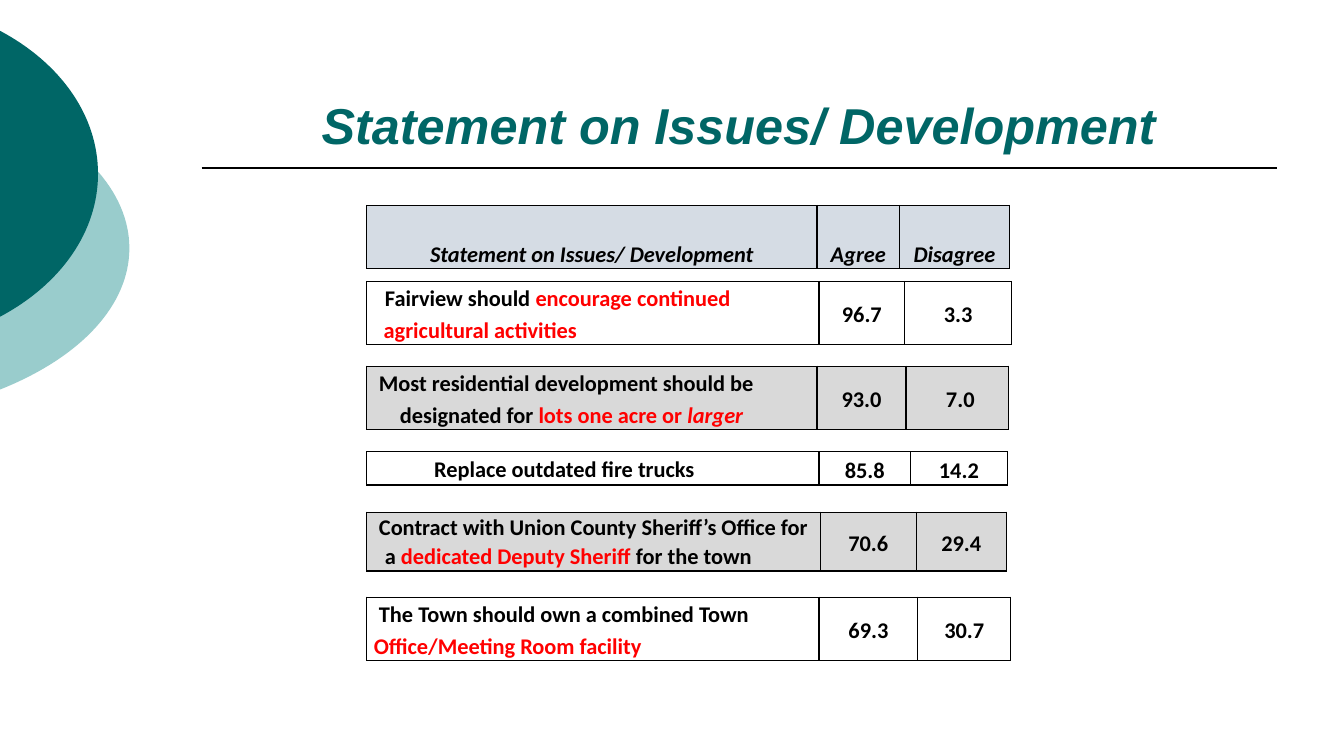
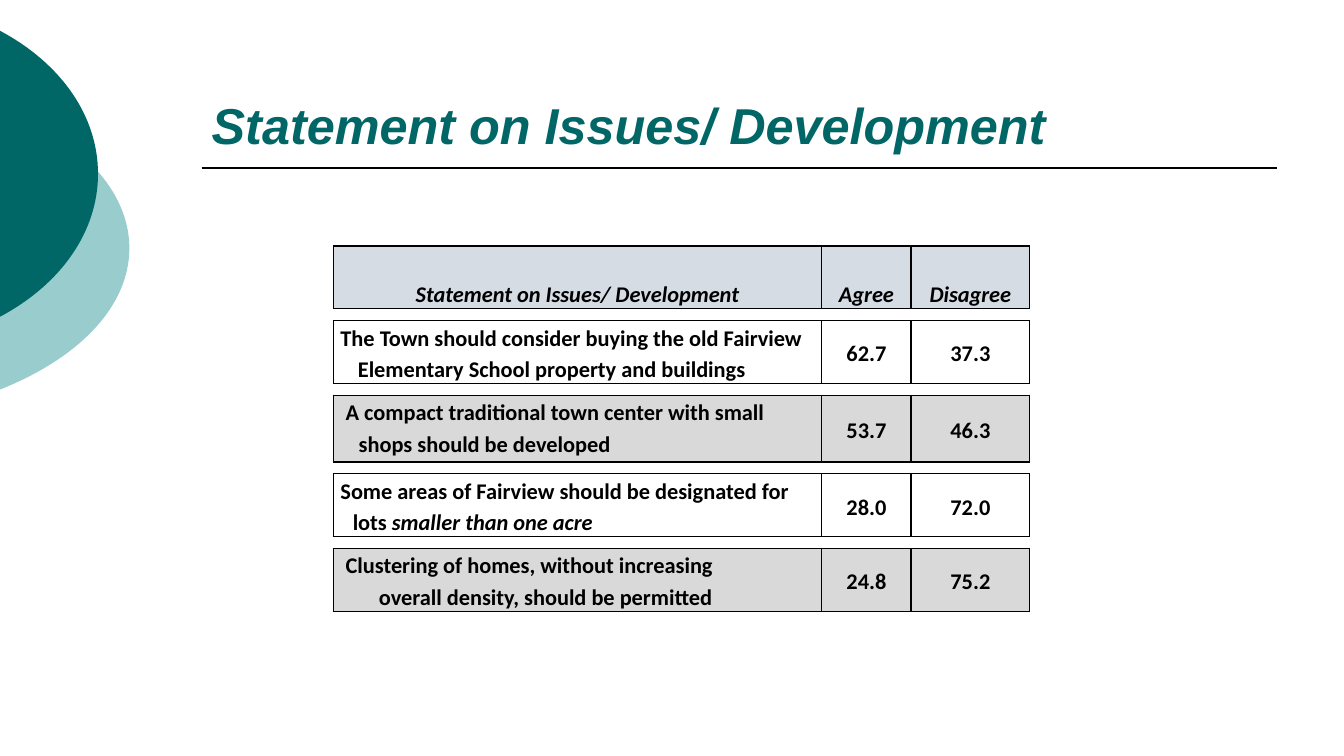
"""Build two slides of survey statements with their agree and disagree shares."""
from dataclasses import dataclass

from lxml import etree
from pptx import Presentation
from pptx import util as u
from pptx.dml.color import RGBColor
from pptx.enum import shapes, text
from pptx.oxml import ns


@dataclass(frozen=True)
class Theme:
    """Colours, fonts and type sizes of the deck."""
    teal: RGBColor = RGBColor(0x00, 0x66, 0x66)
    pale_teal: RGBColor = RGBColor(0x99, 0xCC, 0xCC)
    black: RGBColor = RGBColor(0x00, 0x00, 0x00)
    red: RGBColor = RGBColor(0xFF, 0x00, 0x00)
    header: RGBColor = RGBColor(0xD5, 0xDC, 0xE4)
    band: RGBColor = RGBColor(0xD9, 0xD9, 0xD9)
    title_font: str = "Arial"
    table_font: str = "Calibri"
    title_size: u.Pt = u.Pt(36)
    table_size: u.Pt = u.Pt(16)
    rule: u.Pt = u.Pt(1)


@dataclass(frozen=True)
class Disc:
    """The frame of a disc that the left edge cuts, in centimetres."""
    left: float
    top: float
    width: float
    height: float
    color: RGBColor


@dataclass(frozen=True)
class Phrase:
    """A stretch of wording with its own emphasis."""
    words: str
    red: bool = False
    italic: bool = False


@dataclass(frozen=True)
class Line:
    """A paragraph of a statement, with its indents in centimetres."""
    phrases: tuple[Phrase, ...]
    left: float = 0
    first: float = 0
    spacing: float = 1.15


@dataclass(frozen=True)
class Statement:
    """A statement with its shares; lengths are in centimetres."""
    lines: tuple[Line, ...]
    agree: str
    disagree: str
    widths: tuple[float, ...]
    gap: float = 0.3
    height: float = 1.58
    disagree_indent: float = 0


@dataclass(frozen=True)
class Survey:
    """The content of one slide; lengths are in centimetres."""
    align: text.PP_ALIGN
    left: float
    top: float
    widths: tuple[float, ...]
    statements: tuple[Statement, ...]


THEME = Theme()
TITLE = "Statement on Issues/ Development"
HEADER_HEIGHT = 1.58
EVEN = (12.31, 2.25, 2.99)
DISCS = (Disc(-11.99, 1.91, 15.25, 8.69, THEME.pale_teal),
         Disc(-8.99, 0, 11.46, 8.76, THEME.teal))

SURVEYS = (
    Survey(text.PP_ALIGN.CENTER, 9.24, 5.18, (11.35, 2.08, 2.77), (
        Statement((Line((Phrase("Fairview should "), Phrase("encourage continued", red=True)), 0.28),
                   Line((Phrase("agricultural activities", red=True),), 0.25)),
                  "96.7", "3.3", (11.4, 2.16, 2.69), gap=0.33),
        Statement((Line((Phrase("Most residential development should be"),), 0.13),
                   Line((Phrase("designated for "), Phrase("lots one acre or ", red=True),
                         Phrase("larger", red=True, italic=True)), 0.66)),
                  "93.0", "7.0", (11.35, 2.24, 2.59), gap=0.56, disagree_indent=0.15),
        Statement((Line((Phrase("Replace outdated fire trucks"),), 1.52),),
                  "85.8", "14.2", (11.4, 2.31, 2.43), gap=0.57, height=0.84),
        Statement((Line((Phrase("Contract with Union County Sheriff’s Office for a "),
                         Phrase("dedicated Deputy Sheriff ", red=True),
                         Phrase("for the town")), 0.28, -0.15, 1.07),),
                  "70.6", "29.4", (11.43, 2.42, 2.27), gap=0.69, height=1.45),
        Statement((Line((Phrase("The Town should own a combined Town "),
                         Phrase("Office/Meeting Room facility", red=True)), 0, 0.13),),
                  "69.3", "30.7", (11.4, 2.49, 2.34), gap=0.69),
    )),
    Survey(text.PP_ALIGN.LEFT, 8.4, 6.2, EVEN, (
        Statement((Line((Phrase("The Town should consider buying the old Fairview "
                                "Elementary School property and buildings"),), 0.44, -0.44),),
                  "62.7", "37.3", EVEN),
        Statement((Line((Phrase("A compact traditional town center with small "
                                "shops should be developed"),), 0.46, -0.33),),
                  "53.7", "46.3", EVEN, height=1.68),
        Statement((Line((Phrase("Some areas of Fairview should be designated for lots "),
                         Phrase("smaller than one acre", italic=True)), 0.31, -0.31),),
                  "28.0", "72.0", EVEN),
        Statement((Line((Phrase("Clustering of homes, without increasing"),), 0.13),
                   Line((Phrase("overall density, should be permitted"),), 0.97)),
                  "24.8", "75.2", EVEN),
    )),
)


def add_disc(slide, disc: Disc):
    """Draw the part of a disc that shows right of the left edge."""
    edge, tip, middle = -disc.left, disc.width, disc.height / 2
    reach = tip - edge
    half = middle * (1 - (1 - 2 * reach / tip) ** 2) ** 0.5
    shoulder, bend = edge + 0.63 * reach, 0.77 * half
    builder = slide.shapes.build_freeform(0, 0)
    builder.add_line_segments([(u.Cm(tip), 0), (u.Cm(tip), u.Cm(disc.height))], close=True)
    shape = builder.convert_to_shape()
    shape.left, shape.top = u.Cm(disc.left), u.Cm(disc.top)
    shape.width, shape.height = u.Cm(disc.width), u.Cm(disc.height)
    outline = shape.element.spPr.find(f".//{ns.qn('a:path')}")
    outline.set("w", str(shape.width))
    outline.set("h", str(shape.height))
    for command in list(outline):
        outline.remove(command)
    strokes = (
        ("moveTo", ((edge, middle - half),)),
        ("cubicBezTo", ((shoulder, middle - bend), (tip, middle - 0.4 * half), (tip, middle))),
        ("cubicBezTo", ((tip, middle + 0.4 * half), (shoulder, middle + bend),
                        (edge, middle + half))),
        ("close", ()),
    )
    for name, points in strokes:
        command = etree.SubElement(outline, ns.qn(f"a:{name}"))
        for x, y in points:
            etree.SubElement(command, ns.qn("a:pt"), x=str(u.Cm(x)), y=str(u.Cm(y)))
    shape.shadow.inherit = False
    shape.fill.solid()
    shape.fill.fore_color.rgb = disc.color
    shape.line.fill.background()
    return shape


def add_title_rule(slide):
    """Draw the line under the title."""
    rule = slide.shapes.add_connector(
        shapes.MSO_CONNECTOR.STRAIGHT, u.Cm(5.08), u.Cm(4.23), u.Cm(32.18), u.Cm(4.23))
    rule.line.color.rgb = THEME.black
    rule.line.width = THEME.rule
    etree.SubElement(rule.element.spPr, ns.qn("a:effectLst"))
    return rule


def dress_layout(layout, slide) -> None:
    """Draw the shared decoration on a slide and hand it to the layout."""
    decoration = [add_disc(slide, disc) for disc in DISCS] + [add_title_rule(slide)]
    for index, part in enumerate(decoration, start=2):
        layout.shapes.element.insert(index, part.element)


def set_title(slide, align: text.PP_ALIGN) -> None:
    """Place, fill and format the title placeholder."""
    title = slide.shapes.title
    title.left, title.top = u.Cm(5.08), u.Cm(0.84)
    title.width, title.height = u.Cm(27.08), u.Cm(3.18)
    frame = title.text_frame
    frame.text = TITLE
    frame.auto_size = text.MSO_AUTO_SIZE.NONE
    frame.vertical_anchor = text.MSO_ANCHOR.BOTTOM
    paragraph = frame.paragraphs[0]
    paragraph.alignment = align
    font = paragraph.font
    font.name, font.size = THEME.title_font, THEME.title_size
    font.bold = font.italic = True
    font.color.rgb = THEME.teal


def style_cell(cell, fill: RGBColor | None, anchor: text.MSO_ANCHOR) -> None:
    """Set the margins, fill, anchor and borders of a cell."""
    cell.margin_left = cell.margin_right = u.Cm(0.18)
    cell.margin_top = cell.margin_bottom = 0
    cell.vertical_anchor = anchor
    if fill is None:
        cell.fill.background()
    else:
        cell.fill.solid()
        cell.fill.fore_color.rgb = fill
    properties = cell._tc.get_or_add_tcPr()
    for index, side in enumerate(("lnL", "lnR", "lnT", "lnB")):
        border = etree.Element(ns.qn(f"a:{side}"), w=str(THEME.rule))
        paint = etree.SubElement(border, ns.qn("a:solidFill"))
        etree.SubElement(paint, ns.qn("a:srgbClr"), val=str(THEME.black))
        properties.insert(index, border)


def write_line(paragraph, line: Line, align: text.PP_ALIGN) -> None:
    """Write a line, with shared type on the paragraph and emphasis on its runs."""
    paragraph.alignment = align
    paragraph.line_spacing = line.spacing
    indents = paragraph._p.get_or_add_pPr()
    indents.set("marL", str(u.Cm(line.left)))
    indents.set("indent", str(u.Cm(line.first)))
    font = paragraph.font
    font.name, font.size, font.bold = THEME.table_font, THEME.table_size, True
    font.color.rgb = THEME.black
    for phrase in line.phrases:
        run = paragraph.add_run()
        run.text = phrase.words
        if phrase.red:
            run.font.color.rgb = THEME.red
        if phrase.italic:
            run.font.italic = True


def add_row_table(slide, left: float, top: float, widths: tuple[float, ...], height: float):
    """Add a plain table of one row and return its cells."""
    table = slide.shapes.add_table(
        1, len(widths), u.Cm(left), u.Cm(top), u.Cm(sum(widths)), u.Cm(height)).table
    table.first_row = table.horz_banding = False
    for column, width in zip(table.columns, widths):
        column.width = u.Cm(width)
    return table.rows[0].cells


def add_header(slide, survey: Survey) -> None:
    """Draw the row of column headings."""
    cells = add_row_table(slide, survey.left, survey.top, survey.widths, HEADER_HEIGHT)
    for cell, heading in zip(cells, (TITLE, "Agree", "Disagree")):
        style_cell(cell, THEME.header, text.MSO_ANCHOR.BOTTOM)
        write_line(cell.text_frame.paragraphs[0], Line((Phrase(heading, italic=True),)),
                   text.PP_ALIGN.CENTER)


def add_statement(slide, statement: Statement, left: float, top: float,
                  fill: RGBColor | None) -> None:
    """Draw a statement and its two shares."""
    wording, *shares = add_row_table(slide, left, top, statement.widths, statement.height)
    style_cell(wording, fill, text.MSO_ANCHOR.TOP)
    frame = wording.text_frame
    for index, line in enumerate(statement.lines):
        paragraph = frame.add_paragraph() if index else frame.paragraphs[0]
        write_line(paragraph, line, text.PP_ALIGN.LEFT)
    lines = (Line((Phrase(statement.agree),)),
             Line((Phrase(statement.disagree),), statement.disagree_indent))
    for cell, line in zip(shares, lines):
        style_cell(cell, fill, text.MSO_ANCHOR.MIDDLE)
        write_line(cell.text_frame.paragraphs[0], line, text.PP_ALIGN.CENTER)


def add_survey(slide, survey: Survey) -> None:
    """Fill a slide with its title, headings and statements."""
    set_title(slide, survey.align)
    add_header(slide, survey)
    bottom = survey.top + HEADER_HEIGHT
    for index, statement in enumerate(survey.statements):
        top = bottom + statement.gap
        add_statement(slide, statement, survey.left, top, THEME.band if index % 2 else None)
        bottom = top + statement.height


def main() -> None:
    """Build and save the deck."""
    deck = Presentation()
    deck.slide_width, deck.slide_height = u.Cm(33.87), u.Cm(19.05)
    layout = deck.slide_layouts.get_by_name("Title Only")
    slides = [deck.slides.add_slide(layout) for _ in SURVEYS]
    dress_layout(layout, slides[0])
    for slide, survey in zip(slides, SURVEYS):
        add_survey(slide, survey)
    deck.save("out.pptx")


if __name__ == "__main__":
    main()
